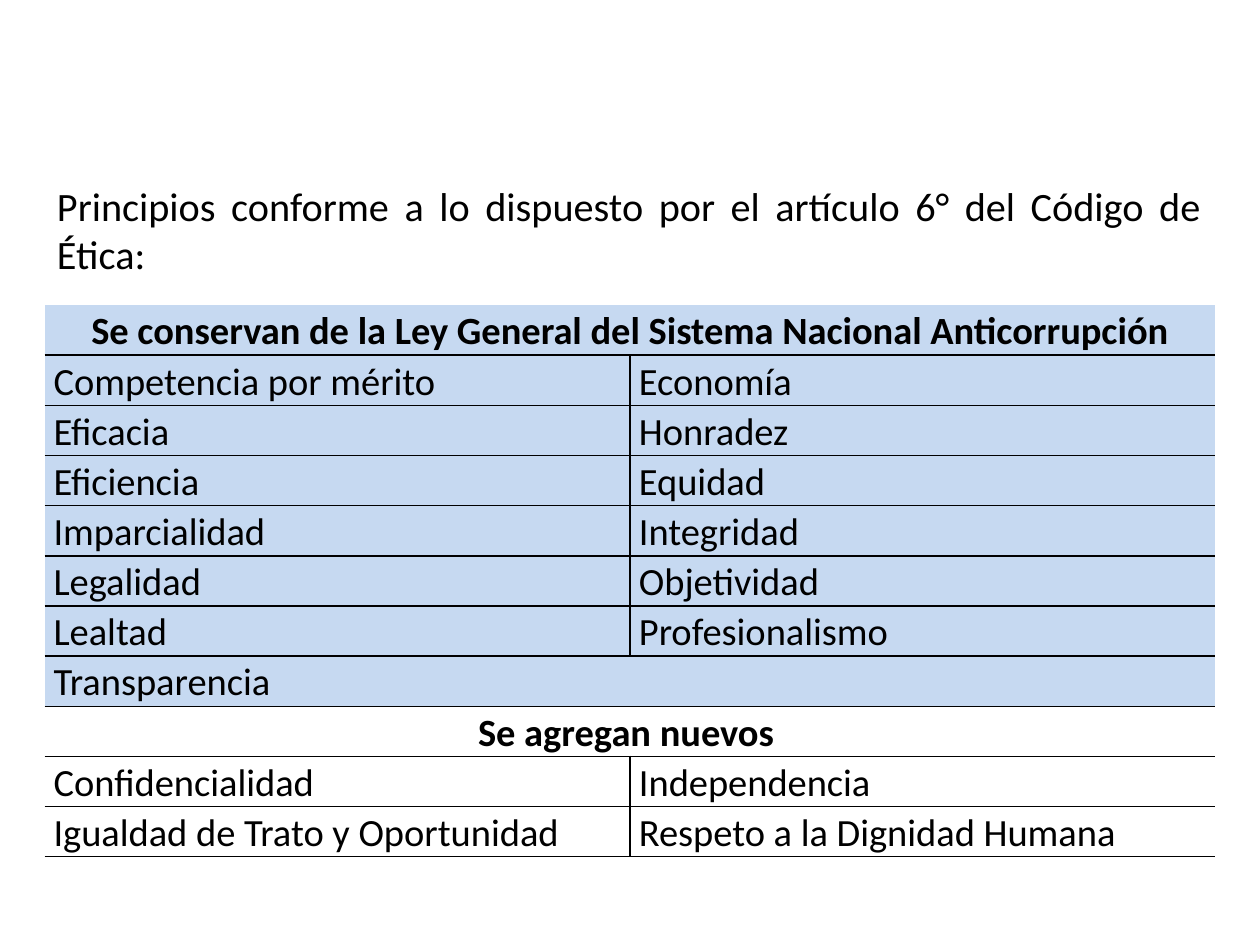
from lxml import etree
from pptx import Presentation
from pptx.dml.color import RGBColor
from pptx.enum.shapes import MSO_SHAPE
from pptx.enum.text import MSO_ANCHOR, PP_ALIGN
from pptx.oxml.ns import qn
from pptx.util import Cm, Pt

RECTANGLE = MSO_SHAPE.RECTANGLE
MIDDLE = MSO_ANCHOR.MIDDLE
LEFT, CENTER, JUSTIFY = PP_ALIGN.LEFT, PP_ALIGN.CENTER, PP_ALIGN.JUSTIFY

COLORS = {"text": "000000", "line": "000000", "kept": "C6D9F1", "new": "FFFFFF"}
FONT = "Calibri"
TITLE = "Principios conforme a lo dispuesto por el artículo 6° del Código de Ética:"
KEPT_HEADING = "Se conservan de la Ley General del Sistema Nacional Anticorrupción"
NEW_HEADING = "Se agregan nuevos"
KEPT_ROWS = [
    (KEPT_HEADING,),
    ("Competencia por mérito", "Economía"),
    ("Eficacia", "Honradez"),
    ("Eficiencia", "Equidad"),
    ("Imparcialidad", "Integridad"),
    ("Legalidad", "Objetividad"),
    ("Lealtad", "Profesionalismo"),
    ("Transparencia",),
]
NEW_ROWS = [
    (NEW_HEADING,),
    ("Confidencialidad", "Independencia"),
    ("Igualdad de Trato y Oportunidad", "Respeto a la Dignidad Humana"),
]


def color(name):
    return RGBColor.from_string(COLORS[name])


def add_run(paragraph, text, size, bold=False):
    run = paragraph.add_run()
    run.text = text
    run.font.name = FONT
    run.font.size = Pt(size)
    run.font.bold = bold
    run.font.color.rgb = color("text")


def set_borders(cell, visible):
    properties = cell._tc.get_or_add_tcPr()
    for side in "LRTB":
        line = etree.SubElement(properties, qn(f"a:ln{side}"), w=str(Pt(1)))
        if side in visible:
            fill = etree.SubElement(line, qn("a:solidFill"))
            etree.SubElement(fill, qn("a:srgbClr"), val=COLORS["line"])
        else:
            etree.SubElement(line, qn("a:noFill"))


def format_cell(cell, fill, borders):
    set_borders(cell, borders)
    cell.fill.solid()
    cell.fill.fore_color.rgb = color(fill)
    cell.margin_left = cell.margin_right = Cm(0.18)
    cell.margin_top = cell.margin_bottom = 0


def write_cell(cell, text):
    heading = text in (KEPT_HEADING, NEW_HEADING)
    paragraph = cell.text_frame.paragraphs[0]
    paragraph.alignment = CENTER if heading else LEFT
    paragraph.line_spacing = 1.07
    add_run(paragraph, text, 22, heading)
    if text == NEW_HEADING:
        add_run(paragraph, " ", 20)


def add_title(slide, left, top, width, height):
    shape = slide.shapes.add_shape(RECTANGLE, left, top, width, height)
    shape.shadow.inherit = False
    shape.fill.solid()
    shape.fill.fore_color.rgb = color("new")
    shape.line.fill.background()
    frame = shape.text_frame
    frame.word_wrap = True
    frame.vertical_anchor = MIDDLE
    paragraph = frame.paragraphs[0]
    paragraph.alignment = JUSTIFY
    add_run(paragraph, TITLE, 23)


def add_principles(slide, left, top, width, height):
    rows = [(row, "kept") for row in KEPT_ROWS] + [(row, "new") for row in NEW_ROWS]
    table = slide.shapes.add_table(len(rows), 2, left, top, width, height).table
    table.first_row = table.horz_banding = False
    for index, (texts, fill) in enumerate(rows):
        first, second = table.cell(index, 0), table.cell(index, 1)
        top_border = "T" if index else ""
        divided = len(texts) == 2
        format_cell(first, fill, top_border + ("RB" if divided else "B"))
        format_cell(second, fill, top_border + ("LB" if divided else "B"))
        if not divided:
            first.merge(second)
        for cell, text in zip((first, second), texts):
            write_cell(cell, text)


def main():
    presentation = Presentation()
    presentation.slide_width = Cm(25.4)
    presentation.slide_height = Cm(19.05)
    slide = presentation.slides.add_slide(presentation.slide_layouts[6])
    left, width = Cm(0.9), Cm(23.6)
    add_title(slide, left, Cm(3.12), width, Cm(3))
    add_principles(slide, left, Cm(6.15), width, Cm(10.67))
    presentation.save("out.pptx")


if __name__ == "__main__":
    main()
